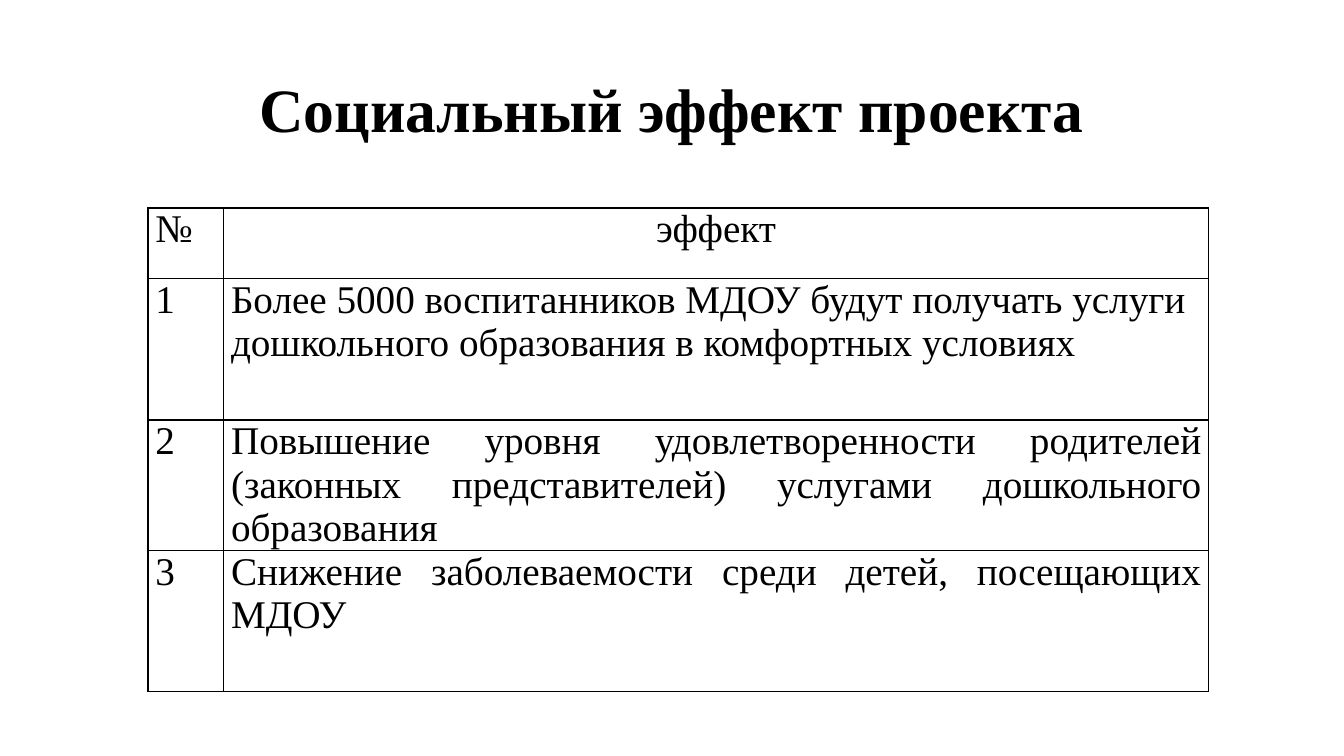
from dataclasses import dataclass

import pptx
import pptx.dml.color
import pptx.enum.text
import pptx.oxml
import pptx.oxml.ns
import pptx.util

PX = 9525
ALIGN = pptx.enum.text.PP_ALIGN
ANCHOR = pptx.enum.text.MSO_ANCHOR


@dataclass(frozen=True)
class Theme:
    font: str = "Times New Roman"
    ink: str = "000000"
    title_size: int = 44
    table_size: int = 28
    border_width: int = 1


THEME = Theme()

TITLE = "Социальный эффект проекта"
EFFECTS = [
    ("№", "эффект", ALIGN.CENTER),
    ("1", "Более 5000 воспитанников МДОУ будут получать услуги "
          "дошкольного образования в комфортных условиях", ALIGN.LEFT),
    ("2", "Повышение уровня удовлетворенности родителей (законных "
          "представителей) услугами дошкольного образования", ALIGN.JUSTIFY),
    ("3", "Снижение заболеваемости среди детей, посещающих МДОУ", ALIGN.JUSTIFY),
]
COLUMN_WIDTHS = [72, 938]
ROW_HEIGHTS = [67, 135, 67, 135]


def px(n):
    return pptx.util.Emu(n * PX)


def style_paragraph(p, size, align, bold=False):
    p.alignment = align
    p.font.name = THEME.font
    p.font.size = pptx.util.Pt(size)
    p.font.bold = bold
    p.font.color.rgb = pptx.dml.color.RGBColor.from_string(THEME.ink)


def add_title(s, text, left, top, width, height):
    sp = s.shapes.title
    sp.left, sp.top, sp.width, sp.height = map(px, (left, top, width, height))
    tf = sp.text_frame
    tf.text = text
    tf.word_wrap = True
    tf.vertical_anchor = ANCHOR.MIDDLE
    p = tf.paragraphs[0]
    p.line_spacing = 0.9
    style_paragraph(p, THEME.title_size, ALIGN.CENTER, bold=True)


def add_borders(cell):
    tc_pr = cell._tc.get_or_add_tcPr()
    width = pptx.util.Pt(THEME.border_width)
    for side in ("lnL", "lnR", "lnT", "lnB"):
        tc_pr.append(pptx.oxml.parse_xml(
            f'<a:{side} {pptx.oxml.ns.nsdecls("a")} w="{width}">'
            f'<a:solidFill><a:srgbClr val="{THEME.ink}"/></a:solidFill></a:{side}>'))


def fill_cell(cell, text, align):
    cell.margin_left = cell.margin_right = px(7)
    cell.margin_top = cell.margin_bottom = 0
    cell.vertical_anchor = ANCHOR.TOP
    add_borders(cell)
    cell.fill.background()
    cell.text = text
    style_paragraph(cell.text_frame.paragraphs[0], THEME.table_size, align)


def add_effects_table(s, left, top):
    frame = s.shapes.add_table(
        len(EFFECTS), len(COLUMN_WIDTHS), px(left), px(top),
        px(sum(COLUMN_WIDTHS)), px(sum(ROW_HEIGHTS)))
    table = frame.table
    table.first_row = table.horz_banding = False
    for column, width in zip(table.columns, COLUMN_WIDTHS):
        column.width = px(width)
    for row, height, (number, effect, align) in zip(table.rows, ROW_HEIGHTS, EFFECTS):
        row.height = px(height)
        fill_cell(row.cells[0], number, ALIGN.JUSTIFY)
        fill_cell(row.cells[1], effect, align)


def main():
    prs = pptx.Presentation()
    prs.slide_width, prs.slide_height = px(1280), px(720)
    s = prs.slides.add_slide(prs.slide_layouts.get_by_name("Title Only"))
    add_title(s, TITLE, 88, 38, 1104, 139)
    add_effects_table(s, 141, 198)
    prs.save("out.pptx")


if __name__ == "__main__":
    main()
